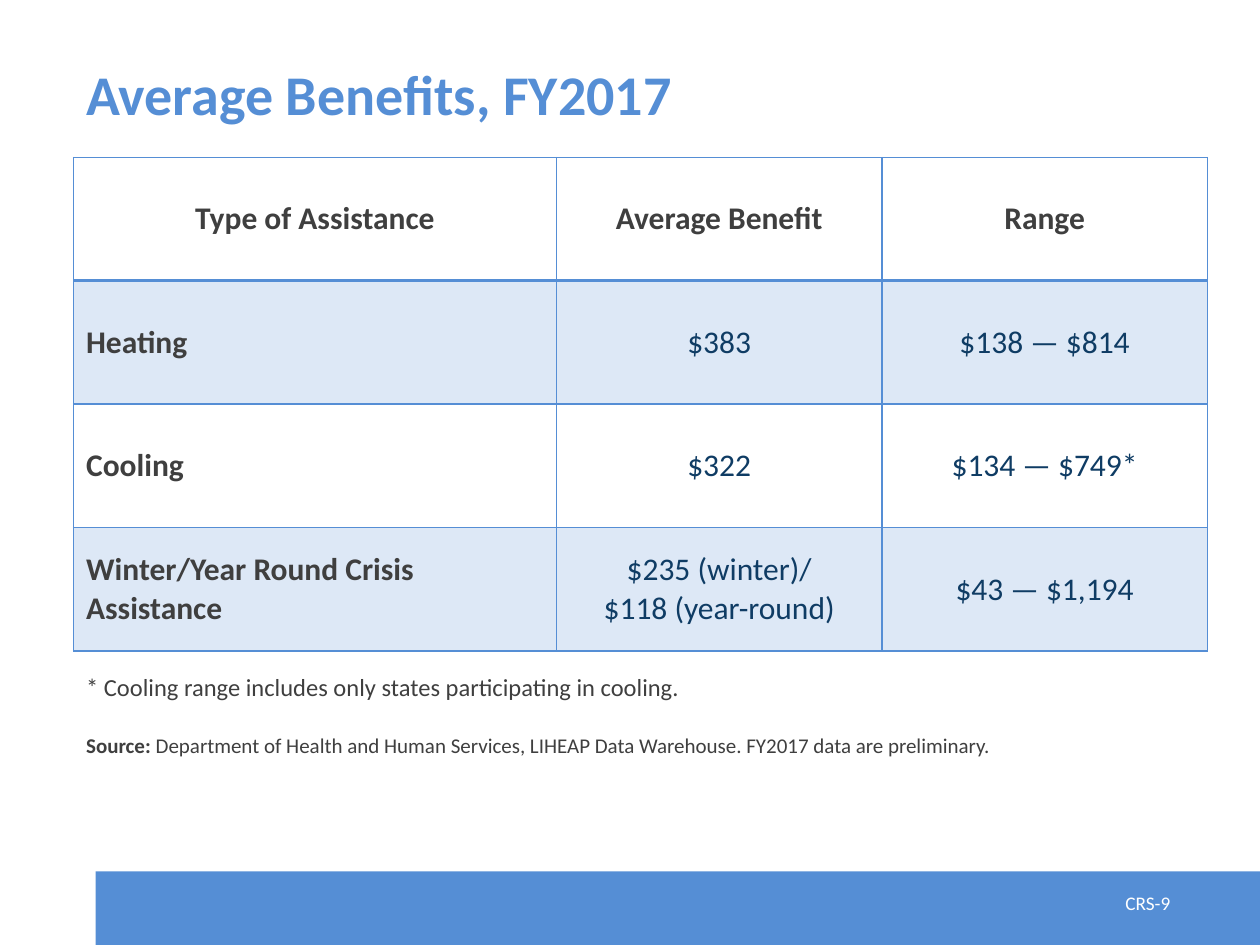
from pptx import Presentation
from pptx.dml.color import RGBColor
from pptx.enum.shapes import MSO_SHAPE
from pptx.enum.text import MSO_ANCHOR, MSO_AUTO_SIZE, PP_ALIGN
from pptx.oxml.ns import qn
from pptx.util import Pt
from lxml.etree import SubElement

COLORS = {"blue": "558ED5", "gray": "3F3F3F", "navy": "0F3C64", "white": "FFFFFF"}
WIDTH, HEIGHT = 720, 540
LEFT = 42


class Deck:
    font = "Calibri"

    def __init__(self, slide):
        self.slide = slide

    def color(self, name):
        return RGBColor.from_string(COLORS[name])

    def place(self, shape, left, top, width, height):
        shape.left, shape.top = Pt(left), Pt(top)
        shape.width, shape.height = Pt(width), Pt(height)

    def run(self, para, text, size, color, bold=False):
        run = para.add_run()
        run.text = text
        run.font.name = self.font
        run.font.size = Pt(size)
        run.font.bold = bold
        run.font.color.rgb = self.color(color)

    def bar(self, left, top):
        bar = self.slide.shapes.add_shape(
            MSO_SHAPE.RECTANGLE, Pt(left), Pt(top), Pt(WIDTH - left), Pt(HEIGHT - top))
        bar.shadow.inherit = False
        bar.fill.solid()
        bar.fill.fore_color.rgb = self.color("blue")
        bar.line.fill.background()

    def label(self, text, left, top, width, height):
        box = self.slide.shapes.add_textbox(Pt(left), Pt(top), Pt(width), Pt(height))
        box.text_frame.word_wrap = True
        self.run(box.text_frame.paragraphs[0], text, 11, "white")

    def title(self, text, *area):
        title = self.slide.shapes.title
        self.place(title, *area)
        frame = title.text_frame
        frame.auto_size = MSO_AUTO_SIZE.NONE
        frame.vertical_anchor = MSO_ANCHOR.MIDDLE
        para = frame.paragraphs[0]
        para.alignment = PP_ALIGN.LEFT
        self.run(para, text, 32, "blue", True)

    def notes(self, lines, gap, *area):
        body = self.slide.placeholders[1]
        self.place(body, *area)
        frame = body.text_frame
        frame.auto_size = MSO_AUTO_SIZE.NONE
        for i, (size, runs) in enumerate(lines):
            para = frame.add_paragraph() if i else frame.paragraphs[0]
            props = para._p.get_or_add_pPr()
            props.set("marL", "0")
            props.set("indent", "0")
            SubElement(props, qn("a:buNone"))
            para.space_before = Pt(gap if i else 0)
            for text, bold in runs:
                self.run(para, text, size, "gray", bold)

    def border(self, cell, head):
        props = cell._tc.get_or_add_tcPr()
        for side in ("lnL", "lnR", "lnT", "lnB"):
            wide = 2 if head and side == "lnB" else 1
            line = SubElement(props, qn(f"a:{side}"), w=str(Pt(wide)))
            fill = SubElement(line, qn("a:solidFill"))
            SubElement(fill, qn("a:srgbClr"), val=COLORS["blue"])

    def shade(self, cell, tinted):
        if not tinted:
            cell.fill.background()
            return
        cell.fill.solid()
        cell.fill.fore_color.rgb = self.color("blue")
        for tone in cell._tc.tcPr.findall(f"{qn('a:solidFill')}/{qn('a:srgbClr')}"):
            SubElement(tone, qn("a:alpha"), val="20000")

    def table(self, rows, left, top, widths, height):
        frame = self.slide.shapes.add_table(
            len(rows), len(widths), Pt(left), Pt(top), Pt(sum(widths)), Pt(height * len(rows)))
        table = frame.table
        table.first_row = table.horz_banding = False
        for col, width in zip(table.columns, widths):
            col.width = Pt(width)
        for r, row in enumerate(rows):
            table.rows[r].height = Pt(height)
            for c, text in enumerate(row):
                cell = table.cell(r, c)
                cell.vertical_anchor = MSO_ANCHOR.MIDDLE
                self.border(cell, r == 0)
                self.shade(cell, r % 2)
                bold = r == 0 or c == 0
                para = cell.text_frame.paragraphs[0]
                para.alignment = PP_ALIGN.LEFT if r and c == 0 else PP_ALIGN.CENTER
                for i, line in enumerate(text.split("\n")):
                    if i:
                        para.add_line_break()
                    self.run(para, line, 18, "gray" if bold else "navy", bold)


def main():
    prs = Presentation()
    prs.slide_width, prs.slide_height = Pt(WIDTH), Pt(HEIGHT)
    deck = Deck(prs.slides.add_slide(prs.slide_layouts[1]))
    deck.bar(54.7, 498)
    deck.label("CRS-9", 636, 506, 54, 21)
    deck.title("Average Benefits, FY2017", LEFT, 30, 630, 46)
    deck.notes([
        (14, [("* Cooling range includes only states participating in cooling.", False)]),
        (12, [("Source: ", True),
              ("Department of Health and Human Services, LIHEAP Data Warehouse. "
               "FY2017 data are preliminary.", False)]),
    ], 18, LEFT, 380.4, 648, 64)
    deck.table([
        ("Type of Assistance", "Average Benefit", "Range"),
        ("Heating", "$383", "$138 — $814"),
        ("Cooling", "$322", "$134 — $749*"),
        ("Winter/Year Round Crisis Assistance", "$235 (winter)/\n$118 (year-round)",
         "$43 — $1,194"),
    ], LEFT, 90, (276, 186, 186), 70.5)
    prs.save("out.pptx")


if __name__ == "__main__":
    main()
